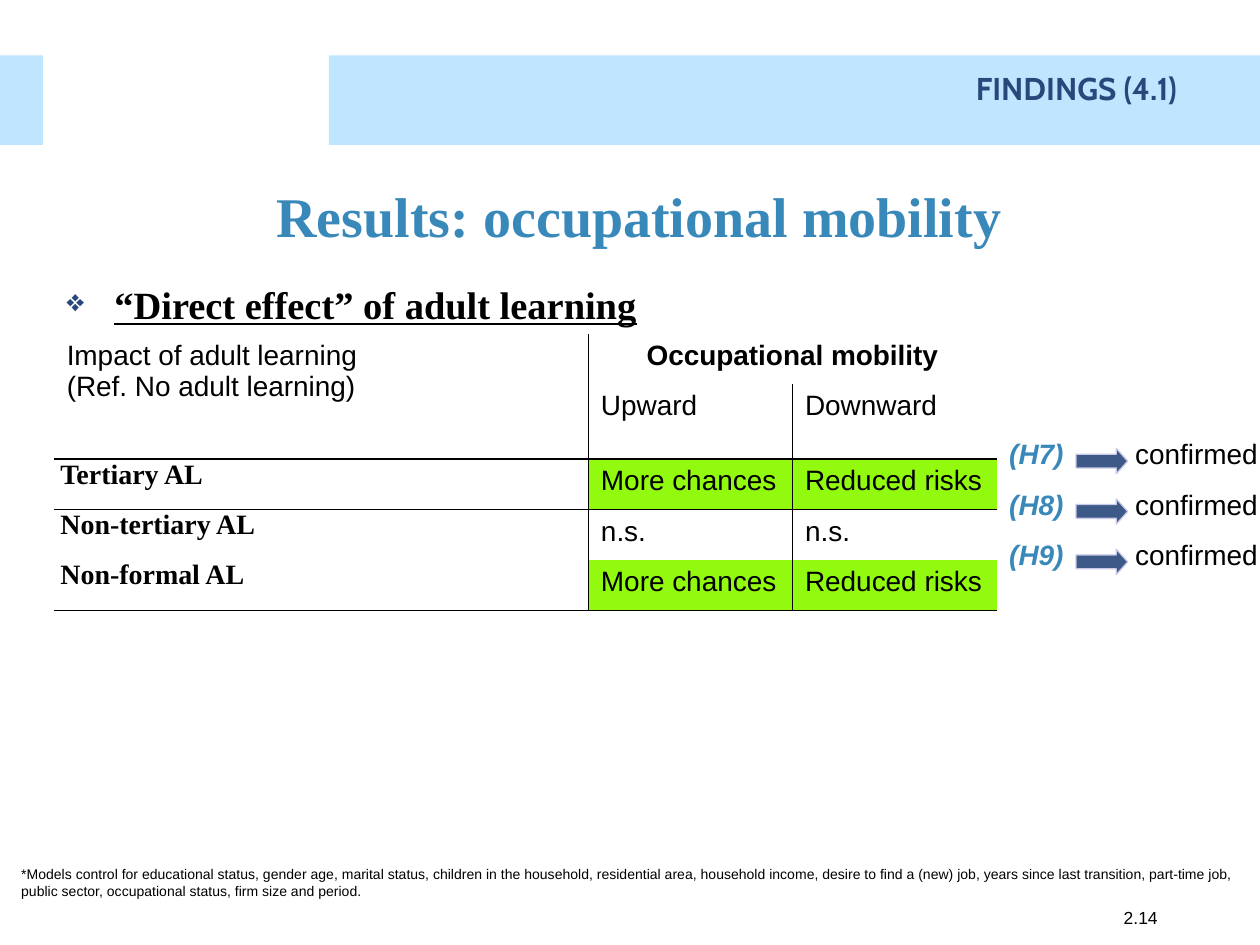
from lxml import etree
from pptx import Presentation
from pptx.dml.color import RGBColor
from pptx.enum.shapes import MSO_SHAPE
from pptx.enum.text import MSO_ANCHOR, PP_ALIGN
from pptx.oxml.ns import qn
from pptx.util import Inches, Pt

RECT, ARROW = MSO_SHAPE.RECTANGLE, MSO_SHAPE.RIGHT_ARROW
LEFT, CENTER, RIGHT = PP_ALIGN.LEFT, PP_ALIGN.CENTER, PP_ALIGN.RIGHT
MIDDLE, TOP = MSO_ANCHOR.MIDDLE, MSO_ANCHOR.TOP
BLACK, NAVY, BLUE, GREEN = "000000", "28487B", "3988BA", "92FA0F"
SERIF, SANS = "Times New Roman", "Arial"
PLAIN = "{2D5ABB26-0587-4C30-8999-92F81FD0307C}"
WIDE, TIGHT = (0.1, 0.05), (0.05, 0)
ROW = 0.4
NOTE = (
    "*Models control for educational status, gender age, marital status, "
    "children in the household, residential area, household income, desire to "
    "find a (new) job, years since last transition, part-time job, public "
    "sector, occupational status, firm size and period."
)
EFFECTS = [
    ("Tertiary AL", "More chances", "Reduced risks"),
    ("Non-tertiary AL", "n.s.", "n.s."),
    ("Non-formal AL", "More chances", "Reduced risks"),
]
CLAIMS = ["(H7) \t\t", "(H8) \t\t", "(H9)\t \t"]


def color(code):
    """Turn a hex string into a colour."""
    return RGBColor.from_string(code)


def style(font, size, code=BLACK, name=SANS, bold=False, italic=False):
    """Set the look of a font."""
    font.size, font.name = Pt(size), name
    font.bold, font.italic = bold, italic
    font.color.rgb = color(code)


def add_shape(slide, kind, box, code, alpha, line=None):
    """Add a see-through preset shape."""
    shape = slide.shapes.add_shape(kind, *map(Inches, box))
    shape.shadow.inherit = False
    shape.fill.solid()
    shape.fill.fore_color.rgb = color(code)
    tint = shape.fill._xPr.find(".//" + qn("a:srgbClr"))
    etree.SubElement(tint, qn("a:alpha"), val=str(alpha * 1000))
    if line:
        shape.line.color.rgb = color(line)
        shape.line.width = Pt(0.75)
    else:
        shape.line.fill.background()
    return shape


def add_text(slide, box, text, size, align=LEFT, anchor=TOP, **look):
    """Add a wrapped text box and return its frame."""
    frame = slide.shapes.add_textbox(*map(Inches, box)).text_frame
    frame.word_wrap, frame.vertical_anchor = True, anchor
    para = frame.paragraphs[0]
    para.text, para.alignment = text, align
    style(para.font, size, **look)
    return frame


def add_bullet(para, mark, code, indent):
    """Give a paragraph a coloured bullet with a hanging indent."""
    props = para._p.get_or_add_pPr()
    props.set("marL", str(Inches(indent)))
    props.set("indent", str(-Inches(indent)))
    tint = etree.Element(qn("a:buClr"))
    etree.SubElement(tint, qn("a:srgbClr"), val=code)
    size = etree.Element(qn("a:buSzPct"), val="80000")
    char = etree.Element(qn("a:buChar"), char=mark)
    for pos, item in enumerate((tint, size, char)):
        props.insert(pos, item)


def add_tabs(para, stops):
    """Give a paragraph left tab stops."""
    tabs = etree.SubElement(para._p.get_or_add_pPr(), qn("a:tabLst"))
    for stop in stops:
        etree.SubElement(tabs, qn("a:tab"), pos=str(Inches(stop)), algn="l")


def add_table(slide, left, top, cols, rows):
    """Add an unstyled table with the given column and row sizes."""
    box = map(Inches, (left, top, sum(cols), sum(rows)))
    table = slide.shapes.add_table(len(rows), len(cols), *box).table
    table.first_row = table.horz_banding = False
    table._tbl.tblPr.find(qn("a:tableStyleId")).text = PLAIN
    for col, width in zip(table.columns, cols):
        col.width = Inches(width)
    for row, height in zip(table.rows, rows):
        row.height = Inches(height)
    return table


def set_cell(cell, text="", fill=None, edges="", inset=WIDE, align=LEFT, **look):
    """Fill a cell with text, borders and a background."""
    side, rim = map(Inches, inset)
    cell.margin_left = cell.margin_right = side
    cell.margin_top = cell.margin_bottom = rim
    props = cell._tc.get_or_add_tcPr()
    for edge in edges:
        line = etree.SubElement(props, qn("a:ln" + edge), w=str(Pt(1)))
        solid = etree.SubElement(line, qn("a:solidFill"))
        etree.SubElement(solid, qn("a:srgbClr"), val=BLACK)
    if fill:
        cell.fill.solid()
        cell.fill.fore_color.rgb = color(fill)
    else:
        cell.fill.background()
    cell.text_frame.text = text
    for para in cell.text_frame.paragraphs:
        para.alignment = align
        style(para.font, 16, **look)


def add_effects(slide):
    """Build the table of adult learning effects."""
    rows = [ROW, 0.59] + [ROW] * len(EFFECTS)
    table = add_table(slide, 0.43, 2.65, [4.24, 1.62, 1.62], rows)
    table.cell(0, 0).merge(table.cell(1, 0))
    table.cell(0, 1).merge(table.cell(0, 2))
    head = "Impact of adult learning\n(Ref. No adult learning)"
    set_cell(table.cell(0, 0), head, edges="RB")
    set_cell(table.cell(1, 0), edges="RB")
    set_cell(table.cell(0, 1), "Occupational mobility", edges="L", align=CENTER, bold=True)
    set_cell(table.cell(1, 1), "Upward", edges="LB")
    set_cell(table.cell(1, 2), "Downward", edges="B")
    for row, (name, *values) in enumerate(EFFECTS, 2):
        end = "B" if row == len(rows) - 1 else ""
        top = "T" if row == 2 else ""
        set_cell(table.cell(row, 0), name, edges="R" + top + end,
                 inset=TIGHT, name=SERIF, bold=True)
        for col, value in enumerate(values, 1):
            side = "L" if col == 1 else ""
            fill = None if value == "n.s." else GREEN
            set_cell(table.cell(row, col), value, fill, side + top + end)


def add_claims(slide):
    """Build the list of hypotheses with their arrows."""
    table = add_table(slide, 7.91, 3.44, [2.6], [ROW] * len(CLAIMS))
    for row, claim in enumerate(CLAIMS):
        cell = table.cell(row, 0)
        set_cell(cell)
        para = cell.text_frame.paragraphs[0]
        add_tabs(para, [0.6, 1])
        lead, tail = para.add_run(), para.add_run()
        lead.text, tail.text = claim, "confirmed"
        style(lead.font, 16, BLUE, bold=True, italic=True)
        style(tail.font, 16)
        arrow = add_shape(slide, ARROW, (8.54, 3.56 + ROW * row, 0.41, 0.2),
                          NAVY, 90, "C9C9E8")
        arrow.adjustments[0], arrow.adjustments[1] = 0.55, 0.45


def main():
    """Build and save the slide."""
    deck = Presentation()
    deck.slide_width, deck.slide_height = Inches(10), Inches(7.5)
    slide = deck.slides.add_slide(deck.slide_layouts[6])
    band = (2.61, 0.44, 7.39, 0.71)
    for box in (band, (0, 0.44, 0.34, 0.71)):
        add_shape(slide, RECT, box, "0099FF", 25)
    add_effects(slide)
    add_text(slide, (0.43, 1.31, 9.29, 0.79), "Results: occupational mobility",
             32, CENTER, MIDDLE, code=BLUE, name=SERIF, bold=True)
    add_text(slide, (8.82, 7.15, 1.18, 0.35), "2.14", 10)
    label = add_text(slide, band, "FINDINGS (4.1)", 18, RIGHT,
                     code=NAVY, name="Cabin", bold=True)
    label.margin_right = Inches(0.66)
    label.paragraphs[0].line_spacing = 1.2
    lead = add_text(slide, (0.43, 2.18, 9.29, 0.79),
                    "“Direct effect” of adult learning", 22, name=SERIF, bold=True)
    add_bullet(lead.paragraphs[0], "❖", NAVY, 0.38)
    lead.paragraphs[0].font.underline = True
    add_claims(slide)
    add_text(slide, (0.07, 6.82, 9.93, 0.37), NOTE, 8)
    deck.save("out.pptx")


if __name__ == "__main__":
    main()
